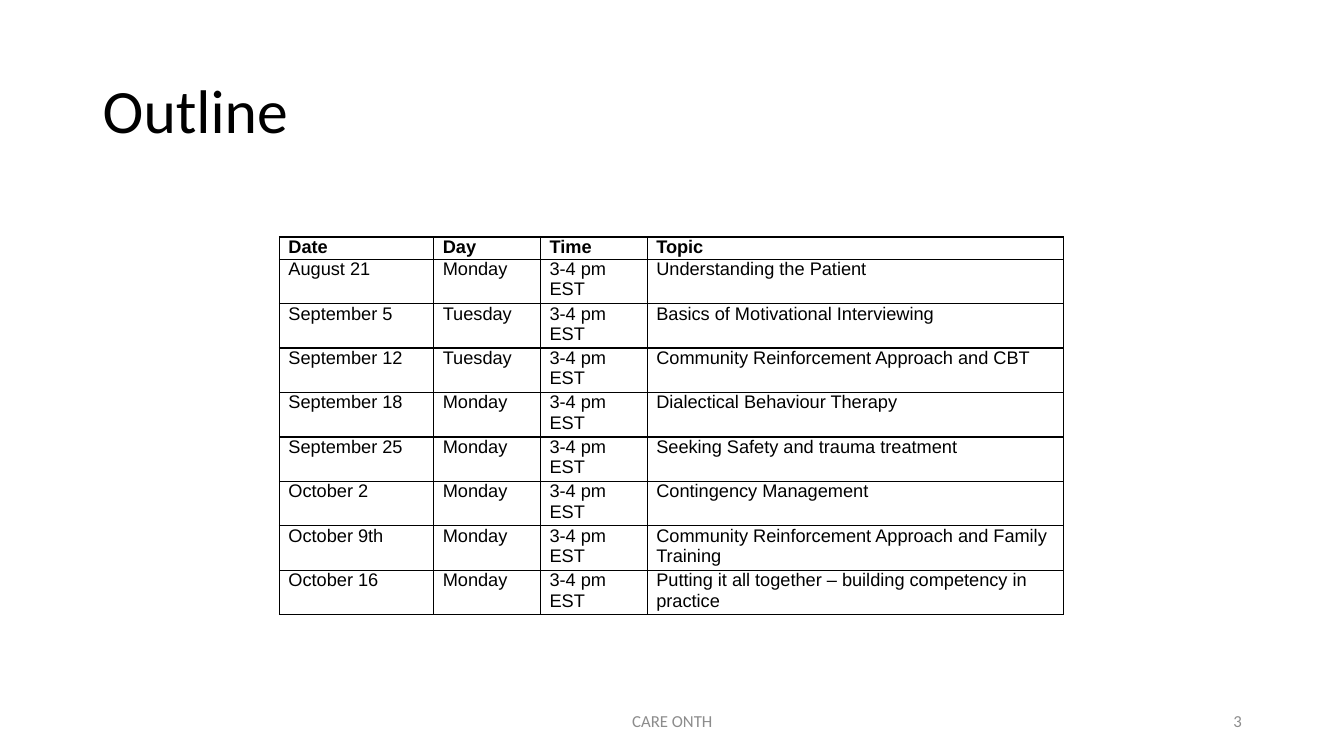
"""Build the course outline slide with its session timetable."""
from dataclasses import dataclass

from lxml.etree import SubElement
from pptx import Presentation
from pptx.dml.color import RGBColor
from pptx.enum.text import MSO_ANCHOR, PP_ALIGN
from pptx.oxml.ns import qn
from pptx.util import Cm, Pt


@dataclass(frozen=True)
class Theme:
    """Colours, fonts and type sizes of the slide."""
    ink: str = "000000"
    grey: str = "8C8C8C"
    paper: str = "FFFFFF"
    head: str = "Calibri"
    body: str = "Arial"
    big: int = 44
    cell: int = 13
    small: int = 12


THEME = Theme()
HOURS = "3-4 pm EST"
WIDTHS = (3.89, 2.69, 2.69, 10.49)
TITLES = ("Date", "Day", "Time", "Topic")
TALKS = (
    ("August 21", "Monday", "Understanding the Patient"),
    ("September 5", "Tuesday", "Basics of Motivational Interviewing"),
    ("September 12", "Tuesday", "Community Reinforcement Approach and CBT"),
    ("September 18", "Monday", "Dialectical Behaviour Therapy"),
    ("September 25", "Monday", "Seeking Safety and trauma treatment"),
    ("October 2", "Monday", "Contingency Management"),
    ("October 9th", "Monday",
     "Community Reinforcement Approach and Family Training"),
    ("October 16", "Monday",
     "Putting it all together – building competency in practice"),
)


def style(para, name, size, color, bold=False):
    """Set the font of a paragraph."""
    font = para.font
    font.name, font.size, font.bold = name, Pt(size), bold
    font.color.rgb = RGBColor.from_string(color)


def add_label(slide, text, box, size, color, align=PP_ALIGN.LEFT):
    """Add a line of text centred vertically in a box given in centimetres."""
    frame = slide.shapes.add_textbox(*map(Cm, box)).text_frame
    frame.word_wrap = True
    frame.vertical_anchor = MSO_ANCHOR.MIDDLE
    para = frame.paragraphs[0]
    para.text, para.alignment = text, align
    style(para, THEME.head, size, color)
    return para


def add_edges(cell):
    """Draw a thin line on all four sides of a cell."""
    props = cell._tc.get_or_add_tcPr()
    for place, side in enumerate(("lnL", "lnR", "lnT", "lnB")):
        line = props.makeelement(qn(f"a:{side}"), {"w": str(Pt(1))})
        fill = SubElement(line, qn("a:solidFill"))
        SubElement(fill, qn("a:srgbClr"), val=THEME.ink)
        props.insert(place, line)


def fill_cell(cell, text, bold):
    """Write a cell and set its margins, fill and edges."""
    cell.margin_left = cell.margin_right = Cm(0.23)
    cell.margin_top = cell.margin_bottom = Cm(0)
    cell.fill.solid()
    cell.fill.fore_color.rgb = RGBColor.from_string(THEME.paper)
    add_edges(cell)
    para = cell.text_frame.paragraphs[0]
    para.text = text
    style(para, THEME.body, THEME.cell, THEME.ink, bold)


def add_plan(slide):
    """Add the timetable, one row per session."""
    rows = [TITLES] + [(date, day, HOURS, topic) for date, day, topic in TALKS]
    highs = [0.56] + [1.12] * len(TALKS)
    table = slide.shapes.add_table(
        len(rows), len(WIDTHS), Cm(7.04), Cm(5.97),
        Cm(sum(WIDTHS)), Cm(sum(highs))).table
    table.horz_banding = False
    for col, width in zip(table.columns, WIDTHS):
        col.width = Cm(width)
    for i, (row, high, texts) in enumerate(zip(table.rows, highs, rows)):
        row.height = Cm(high)
        for cell, text in zip(row.cells, texts):
            fill_cell(cell, text, i == 0)


def main():
    """Build and save the slide."""
    deck = Presentation()
    deck.slide_width, deck.slide_height = Cm(33.87), Cm(19.05)
    slide = deck.slides.add_slide(deck.slide_layouts[6])
    title = add_label(slide, "Outline", (2.34, 1.02, 29.21, 3.68),
                      THEME.big, THEME.ink)
    title.line_spacing = 0.9
    add_plan(slide)
    add_label(slide, "CARE ONTH", (11.23, 17.65, 11.43, 1.02),
              THEME.small, THEME.grey, PP_ALIGN.CENTER)
    add_label(slide, "3", (23.93, 17.65, 7.62, 1.02),
              THEME.small, THEME.grey, PP_ALIGN.RIGHT)
    deck.save("out.pptx")


if __name__ == "__main__":
    main()
